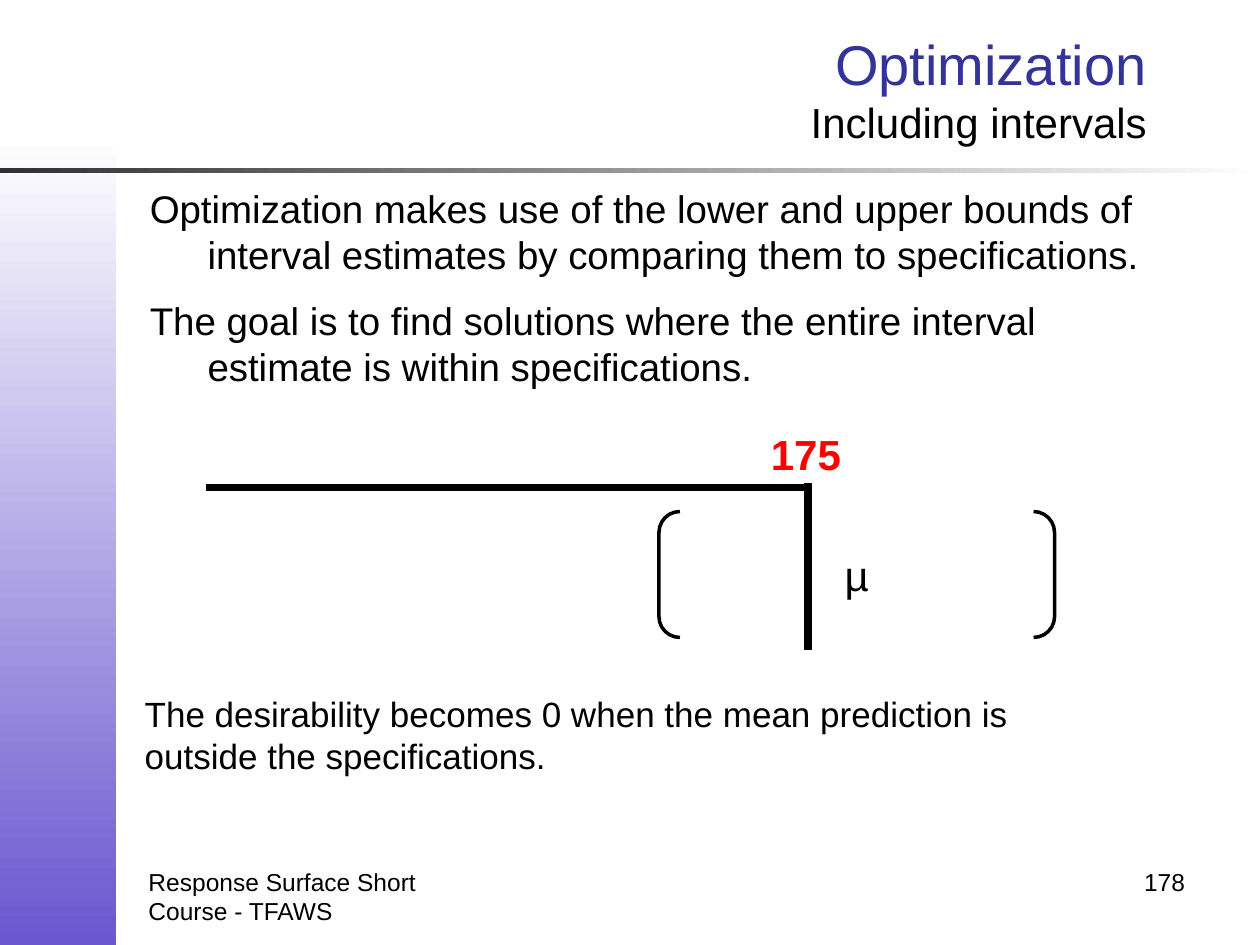
"""Build the slide on optimization with interval estimates."""
from dataclasses import dataclass
from typing import Optional

from pptx import Presentation
from pptx import util as u
from pptx.dml.color import RGBColor
from pptx.enum import shapes, text

COLORS = {
    "white": "FFFFFF",
    "black": "000000",
    "violet": "6B57CF",
    "charcoal": "313131",
    "navy": "333399",
    "red": "FF0000",
}
FONT = "Arial"
LEFT, CENTER, RIGHT = text.PP_ALIGN.LEFT, text.PP_ALIGN.CENTER, text.PP_ALIGN.RIGHT
TOP, MIDDLE = text.MSO_ANCHOR.TOP, text.MSO_ANCHOR.MIDDLE


@dataclass(frozen=True)
class Box:
    x: float
    y: float
    w: float
    h: float

    def lengths(self) -> tuple:
        return tuple(u.Pt(v) for v in (self.x, self.y, self.w, self.h))


@dataclass(frozen=True)
class Run:
    text: str
    size: float
    color: str = "black"
    bold: bool = False


@dataclass(frozen=True)
class Label:
    box: Box
    paragraphs: tuple
    align: text.PP_ALIGN = LEFT
    anchor: text.MSO_ANCHOR = TOP
    wrap: bool = True
    hanging: float = 0
    gap: float = 0
    fill: Optional[str] = None


@dataclass(frozen=True)
class Band:
    box: Box
    start: str
    end: str
    angle: float


BANDS = (
    Band(Box(0, 77.76, 66.24, 462.24), "white", "violet", 270),
    Band(Box(0, 96, 720, 2.88), "charcoal", "white", 0),
)
LIMIT_BARS = (
    Box(118, 277, 345.5, 3.5),
    Box(460, 276.5, 3.5, 94.5),
)
INTERVAL = Label(Box(376.56, 292.32, 226.08, 72), ((Run("µ", 24),),), CENTER, MIDDLE, False)
LABELS = (
    Label(Box(75.6, 392.4, 573.84, 55.44),
          ((Run("The desirability becomes 0 when the mean prediction is "
                "outside the specifications.", 20),),), fill="white"),
    Label(Box(77.76, 491.76, 168, 37.44),
          ((Run("Response Surface Short Course - TFAWS", 14),),)),
    Label(Box(516.24, 491.76, 168, 37.44), ((Run("178", 14),),), RIGHT),
    Label(Box(144, 7.2, 518.4, 86.4),
          ((Run("Optimization", 32, "navy"), Run("Including intervals", 24)),),
          RIGHT, MIDDLE),
    Label(Box(78.48, 102.24, 606.24, 132.48),
          ((Run("Optimization makes use of the lower and upper bounds of "
                "interval estimates by comparing them to specifications.", 22),),
           (Run("The goal is to find solutions where the entire interval "
                "estimate is within specifications.", 22),)),
          hanging=33, gap=11),
    Label(Box(433.44, 241.2, 54.72, 36), ((Run("175", 24, "red", True),),), wrap=False),
)


def rgb(name: str) -> RGBColor:
    return RGBColor.from_string(COLORS[name])


def add_preset(s, kind: shapes.MSO_SHAPE, box: Box):
    sp = s.shapes.add_shape(kind, *box.lengths())
    sp.shadow.inherit = False
    return sp


def add_band(s, band: Band) -> None:
    sp = add_preset(s, shapes.MSO_SHAPE.RECTANGLE, band.box)
    sp.line.fill.background()
    sp.fill.gradient()
    sp.fill.gradient_angle = band.angle
    for stop, name, position in zip(sp.fill.gradient_stops, (band.start, band.end), (0, 1)):
        stop.color.rgb = rgb(name)
        stop.position = position


def add_limit_bar(s, box: Box) -> None:
    sp = add_preset(s, shapes.MSO_SHAPE.RECTANGLE, box)
    sp.fill.solid()
    sp.fill.fore_color.rgb = rgb("black")
    sp.line.color.rgb = rgb("black")
    sp.line.width = u.Pt(0.75)


def write(tf, label: Label) -> None:
    tf.word_wrap = label.wrap
    tf.vertical_anchor = label.anchor
    for i, runs in enumerate(label.paragraphs):
        p = tf.add_paragraph() if i else tf.paragraphs[0]
        p.alignment = label.align
        if i and label.gap:
            p.space_before = u.Pt(label.gap)
        if label.hanging:
            pPr = p._p.get_or_add_pPr()
            pPr.set("marL", str(u.Pt(label.hanging)))
            pPr.set("indent", str(-u.Pt(label.hanging)))
        for j, run in enumerate(runs):
            if j:
                p.add_line_break()
            r = p.add_run()
            r.text = run.text
            r.font.name = FONT
            r.font.size = u.Pt(run.size)
            r.font.bold = run.bold
            r.font.color.rgb = rgb(run.color)


def add_label(s, label: Label) -> None:
    sp = s.shapes.add_textbox(*label.box.lengths())
    if label.fill:
        sp.fill.solid()
        sp.fill.fore_color.rgb = rgb(label.fill)
    write(sp.text_frame, label)


def add_interval(s, label: Label) -> None:
    sp = add_preset(s, shapes.MSO_SHAPE.DOUBLE_BRACKET, label.box)
    sp.fill.background()
    sp.line.color.rgb = rgb("black")
    sp.line.width = u.Pt(2)
    write(sp.text_frame, label)


def main() -> None:
    prs = Presentation()
    prs.slide_width, prs.slide_height = u.Pt(720), u.Pt(540)
    s = prs.slides.add_slide(prs.slide_layouts[6])
    for band in BANDS:
        add_band(s, band)
    for label in LABELS:
        add_label(s, label)
    for bar in LIMIT_BARS:
        add_limit_bar(s, bar)
    add_interval(s, INTERVAL)
    prs.save("out.pptx")


if __name__ == "__main__":
    main()
